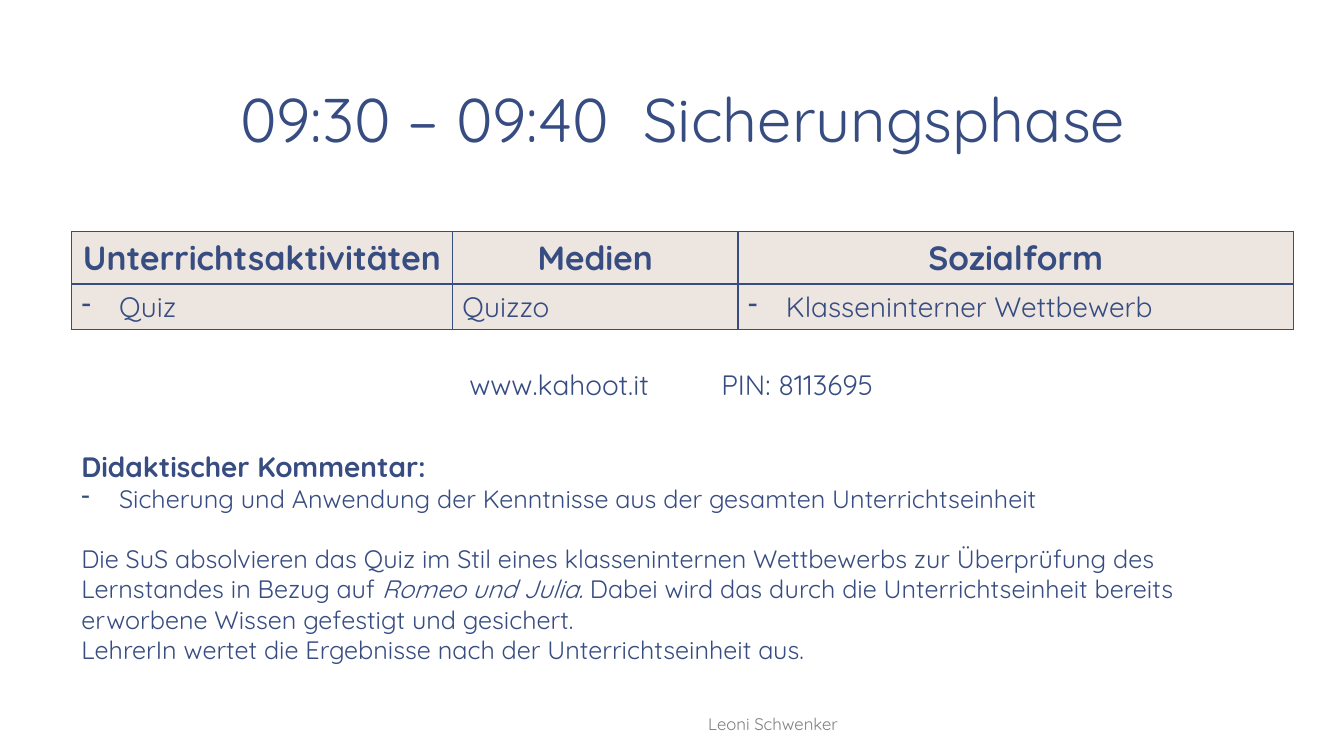
from lxml import etree
from pptx import Presentation
from pptx.dml.color import RGBColor
from pptx.enum import text as t
from pptx.oxml import ns
from pptx.util import Cm, Pt

NAVY = RGBColor(0x37, 0x4C, 0x81)
SAND = RGBColor(0xED, 0xE5, 0xDF)
GREY = RGBColor(0x80, 0x80, 0x80)
FONT = "Quicksand"
CENTER = t.PP_ALIGN.CENTER


def write(paragraph, text, size=18, color=NAVY, bold=False, italic=False,
          align=None, dash=False):
    """Append a formatted run, optionally making the paragraph a dash item."""
    if align is not None:
        paragraph.alignment = align
    if dash:
        properties = paragraph._p.get_or_add_pPr()
        properties.set("marL", str(Cm(0.95)))
        properties.set("indent", str(-Cm(0.95)))
        etree.SubElement(properties, ns.qn("a:buFontTx"))
        etree.SubElement(properties, ns.qn("a:buChar"), char="-")
    run = paragraph.add_run()
    run.text = text
    run.font.name = FONT
    run.font.size = Pt(size)
    run.font.bold = bold
    run.font.italic = italic
    run.font.color.rgb = color


def add_border(cell, side, width):
    line = etree.SubElement(cell._tc.get_or_add_tcPr(), ns.qn(f"a:ln{side}"), w=str(Pt(width)))
    fill = etree.SubElement(line, ns.qn("a:solidFill"))
    etree.SubElement(fill, ns.qn("a:srgbClr"), val=str(NAVY))


presentation = Presentation()
presentation.slide_width = Cm(33.87)
presentation.slide_height = Cm(19.05)
slide = presentation.slides.add_slide(presentation.slide_layouts[5])

# Title
title = slide.shapes.title
title.left, title.top, title.width, title.height = Cm(3.1), Cm(0.2), Cm(28.22), Cm(3.89)
title.text_frame.vertical_anchor = t.MSO_ANCHOR.BOTTOM
title.text_frame.margin_left = title.text_frame.margin_right = Cm(0.33)
title.text_frame.margin_top = title.text_frame.margin_bottom = Cm(0.18)
heading = title.text_frame.paragraphs[0]
heading.line_spacing = 0.85
write(heading, "09:30 – 09:40\tSicherungsphase", size=44, align=CENTER)

# Lesson table
HEADER = {"size": 24, "bold": True, "align": CENTER}
ITEM = {"size": 20, "dash": True}
lesson_rows = [
    [("Unterrichtsaktivitäten", HEADER), ("Medien", HEADER), ("Sozialform", HEADER)],
    [("Quiz", ITEM), ("Quizzo", {"size": 20}), ("Klasseninterner Wettbewerb", ITEM)],
]
table = slide.shapes.add_table(2, 3, Cm(1.8), Cm(5.84), Cm(30.8), Cm(2.46)).table
for column, width in zip(table.columns, (9.6, 7.2, 14)):
    column.width = Cm(width)
for row, height in zip(table.rows, (1.32, 1.14)):
    row.height = Cm(height)
for row_index, lesson_row in enumerate(lesson_rows):
    for column_index, (text, style) in enumerate(lesson_row):
        cell = table.cell(row_index, column_index)
        for side in "LRTB":
            add_border(cell, side, 2 if side == "B" and row_index == 0 else 1)
        cell.fill.solid()
        cell.fill.fore_color.rgb = SAND
        write(cell.text_frame.paragraphs[0], text, **style)

# Quiz access
access = slide.shapes.add_textbox(Cm(4.32), Cm(9.14), Cm(25.2), Cm(1.12)).text_frame
access.word_wrap = True
write(access.paragraphs[0], "www.kahoot.it\t\tPIN: 8113695", size=20, align=CENTER)

# Didactic comment
comment = slide.shapes.add_textbox(Cm(1.8), Cm(11.2), Cm(30.8), Cm(6.76)).text_frame
comment.word_wrap = True
write(comment.paragraphs[0], "Didaktischer Kommentar:", size=20, bold=True)
write(comment.add_paragraph(),
      "Sicherung und Anwendung der Kenntnisse aus der gesamten Unterrichtseinheit", dash=True)
explanation = comment.add_paragraph()
explanation.space_before = Pt(21.5)
write(explanation, "Die SuS absolvieren das Quiz im Stil eines klasseninternen Wettbewerbs "
      "zur Überprüfung des Lernstandes in Bezug auf ")
write(explanation, "Romeo und Julia. ", italic=True)
write(explanation, "Dabei wird das durch die Unterrichtseinheit bereits erworbene Wissen "
      "gefestigt und gesichert.")
write(comment.add_paragraph(),
      "LehrerIn wertet die Ergebnisse nach der Unterrichtseinheit aus.")

# Footer
footer = slide.shapes.add_textbox(Cm(10.85), Cm(17.78), Cm(17.27), Cm(0.89)).text_frame
footer.word_wrap = True
footer.vertical_anchor = t.MSO_ANCHOR.BOTTOM
footer.margin_left = footer.margin_right = Cm(0.33)
footer.margin_top = footer.margin_bottom = Cm(0.18)
write(footer.paragraphs[0], "Leoni Schwenker", size=12, color=GREY, align=CENTER)

presentation.save("out.pptx")
